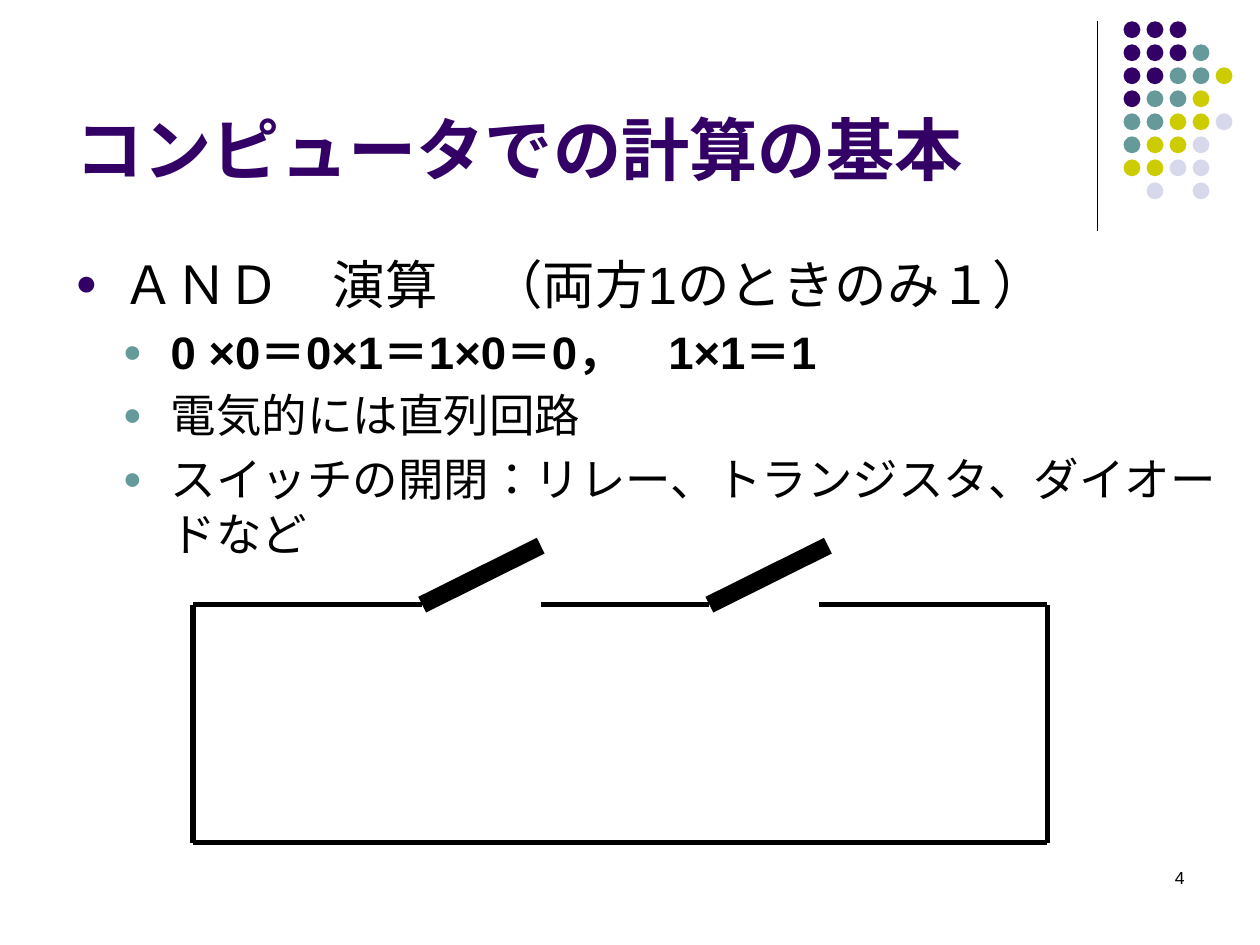
from collections import namedtuple

from lxml.etree import SubElement
from pptx import Presentation
from pptx.dml.color import RGBColor
from pptx.enum.lang import MSO_LANGUAGE_ID as Lang
from pptx.enum.shapes import MSO_CONNECTOR as Connector, MSO_SHAPE as Shape
from pptx.enum.text import MSO_ANCHOR as Anchor, PP_ALIGN as Align
from pptx.oxml.ns import qn
from pptx.util import Cm, Pt

COLORS = {
    "ink": "000000",
    "purple": "330066",
    "teal": "669999",
    "olive": "CCCC00",
    "pale": "D8D8EC",
}
FONT = "Arial"
Box = namedtuple("Box", "left top width height")

# One letter per dot: the colour's initial, or a space for a gap
DOT_ROWS = ["ppp", "pppt", "pptto", "ptto", "ttool", "tool", "ooll", " l l"]
DOT_COLORS = {"p": "purple", "t": "teal", "o": "olive", "l": "pale"}

BULLETS = [
    # text, level, size, bold
    ("ＡＮＤ\u3000演算\u3000（両方1のときのみ１）\u3000".replace("\u3000", "　"), 0, 30, False),
    ("0 ×0＝0×1＝1×0＝0，　1×1＝1", 1, 26, True),
    ("電気的には直列回路", 1, 26, False),
    ("スイッチの開閉：リレー、トランジスタ、ダイオードなど", 1, 26, False),
]


def rgb(name):
    return RGBColor.from_string(COLORS[name])


def add_frame(page, box, anchor=Anchor.TOP):
    """Add an empty wrapping text box and return its text frame."""
    frame = page.shapes.add_textbox(*map(Cm, box)).text_frame
    frame.word_wrap = True
    frame.vertical_anchor = anchor
    return frame


def write(para, text, size=26, bold=False, color="ink", align=Align.LEFT):
    para.alignment = align
    span = para.add_run()
    span.text = text
    span.font.name = FONT
    span.font.size = Pt(size)
    span.font.bold = bold
    span.font.color.rgb = rgb(color)
    span.font.language_id = Lang.JAPANESE


def set_bullet(para, level, color):
    """Give the paragraph a round bullet with a hanging indent."""
    hang = Cm(0.96)
    props = para._p.get_or_add_pPr()
    props.set("marL", str(hang * (level + 1)))
    props.set("indent", str(-hang))
    bullet_color = SubElement(props, qn("a:buClr"))
    SubElement(bullet_color, qn("a:srgbClr"), val=COLORS[color])
    SubElement(props, qn("a:buSzPct"), val="70000")
    SubElement(props, qn("a:buFont"), typeface=FONT)
    SubElement(props, qn("a:buChar"), char="●")


def add_line(page, start, end, width):
    line = page.shapes.add_connector(
        Connector.STRAIGHT, *map(Cm, (*start, *end)))
    line.line.color.rgb = rgb("ink")
    line.line.width = Pt(width)
    SubElement(line._element.spPr, qn("a:effectLst"))


def add_ornament(page, box):
    """Vertical rule with a field of coloured dots on its right."""
    add_line(page, (box.left, box.top), (box.left, box.top + box.height), 0.75)
    diameter, pitch, offset = 0.34, 0.464, 0.53
    for row, letters in enumerate(DOT_ROWS):
        for column, letter in enumerate(letters):
            if letter == " ":
                continue
            dot = page.shapes.add_shape(
                Shape.OVAL,
                Cm(box.left + offset + column * pitch),
                Cm(box.top + row * pitch),
                Cm(diameter), Cm(diameter))
            dot.shadow.inherit = False
            dot.fill.solid()
            dot.fill.fore_color.rgb = rgb(DOT_COLORS[letter])
            dot.line.fill.background()


def add_title(page, box):
    frame = add_frame(page, box, Anchor.BOTTOM)
    write(frame.paragraphs[0], "コンピュータでの計算の基本",
          size=39, bold=True, color="purple")


def add_body(page, box):
    frame = add_frame(page, box)
    for index, (text, level, size, bold) in enumerate(BULLETS):
        para = frame.add_paragraph() if index else frame.paragraphs[0]
        write(para, text, size=size, bold=bold)
        para.level = level
        para.space_before = Pt(size * 0.2)
        set_bullet(para, level, "teal" if level else "purple")


def add_circuit(page, box):
    """Series circuit: a wire loop with two open switches on top."""
    rise, run = 1.19, 2.39
    right, bottom = box.left + box.width, box.top + box.height
    wire_y = box.top + rise

    # Switch levers
    for hinge in (4.62, 10.41):
        x = box.left + hinge
        add_line(page, (x, wire_y), (x + run, box.top), 10)

    # Bottom and side wires
    add_line(page, (box.left, bottom), (right, bottom), 3)
    for x in (box.left, right):
        add_line(page, (x, bottom), (x, wire_y), 3)

    # Top wires between the switches
    for start, end in ((0, 4.62), (7.01, 10.41), (12.62, box.width)):
        add_line(page, (box.left + start, wire_y), (box.left + end, wire_y), 3)


def add_page_number(page, box):
    frame = add_frame(page, box)
    write(frame.paragraphs[0], "4", size=10, align=Align.RIGHT)


def main():
    deck = Presentation()
    deck.slide_width, deck.slide_height = Cm(25.4), Cm(19.05)
    page = deck.slides.add_slide(deck.slide_layouts[6])
    add_ornament(page, Box(22.12, 0.43, 2.72, 4.22))
    add_page_number(page, Box(18.21, 17.35, 5.92, 1.27))
    add_title(page, Box(1.27, 0.33, 20.96, 3.6))
    add_body(page, Box(1.27, 4.95, 24.13, 12.57))
    add_circuit(page, Box(3.89, 11, 17.22, 5.99))
    deck.save("out.pptx")


if __name__ == "__main__":
    main()
